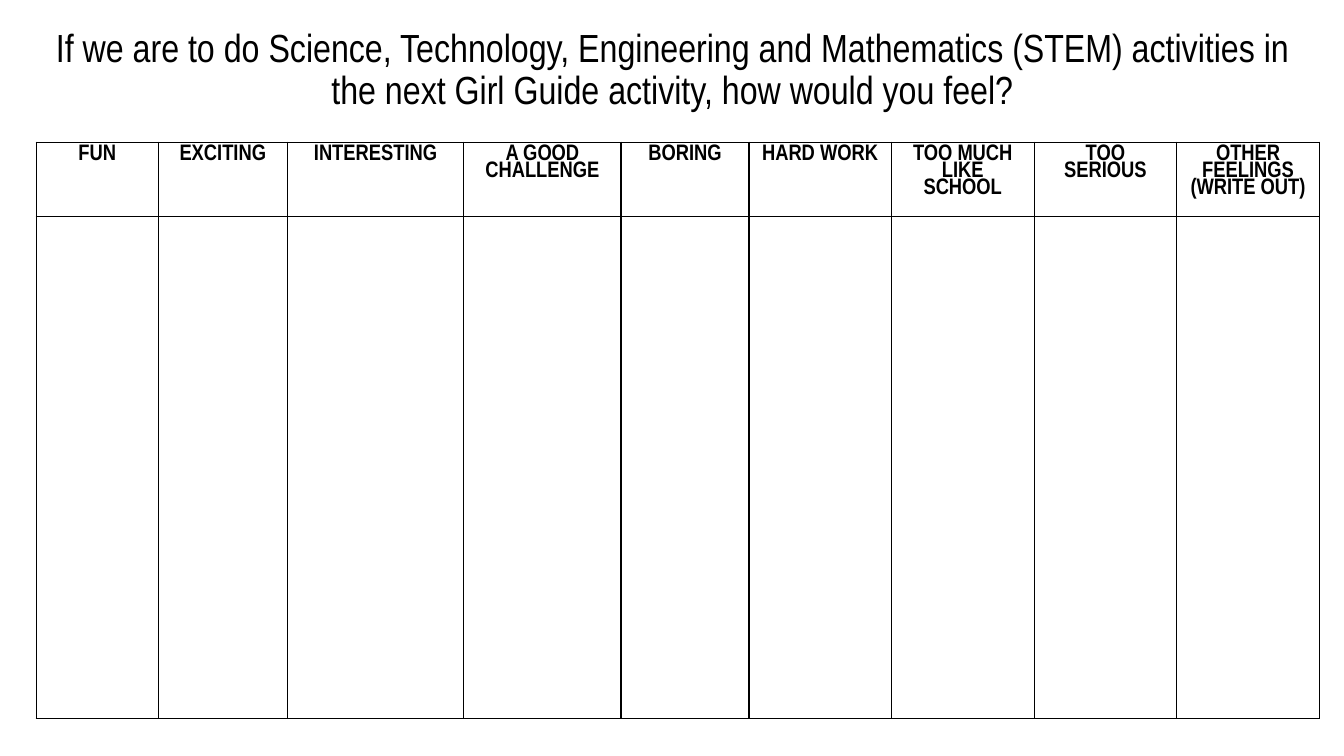
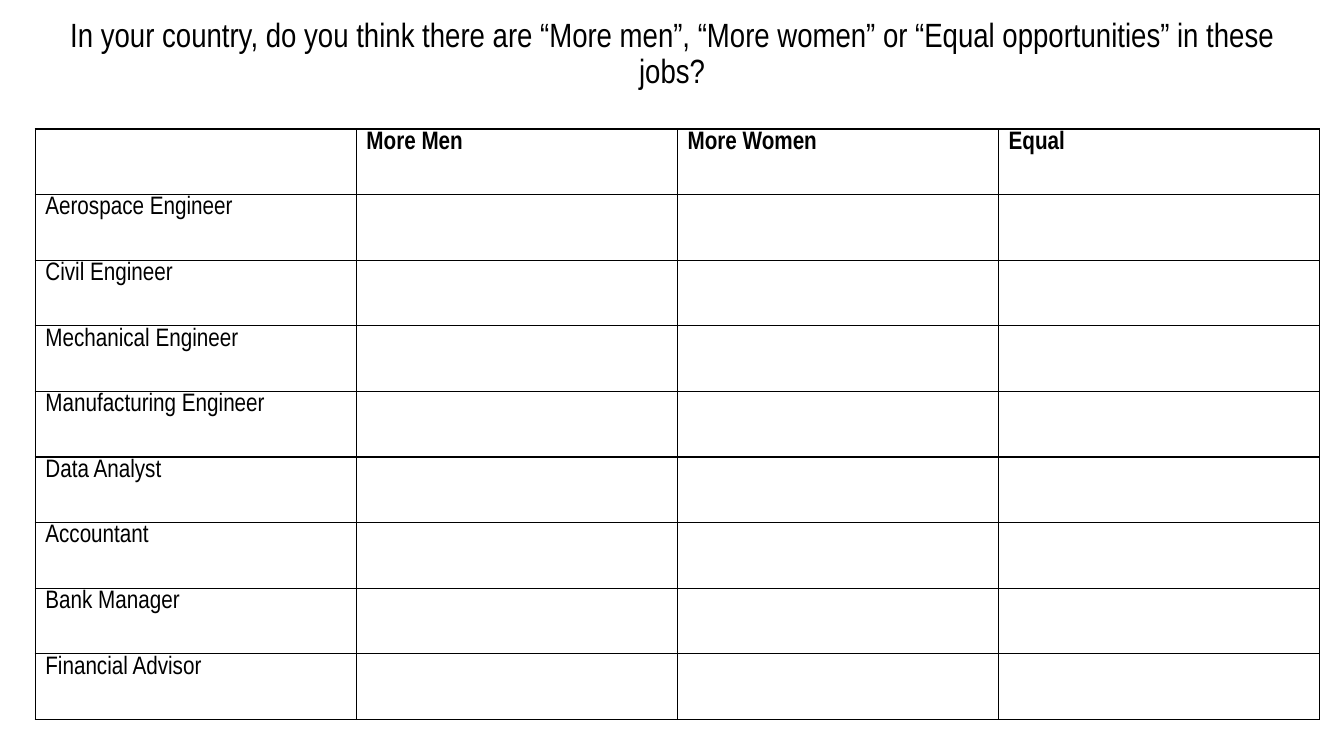
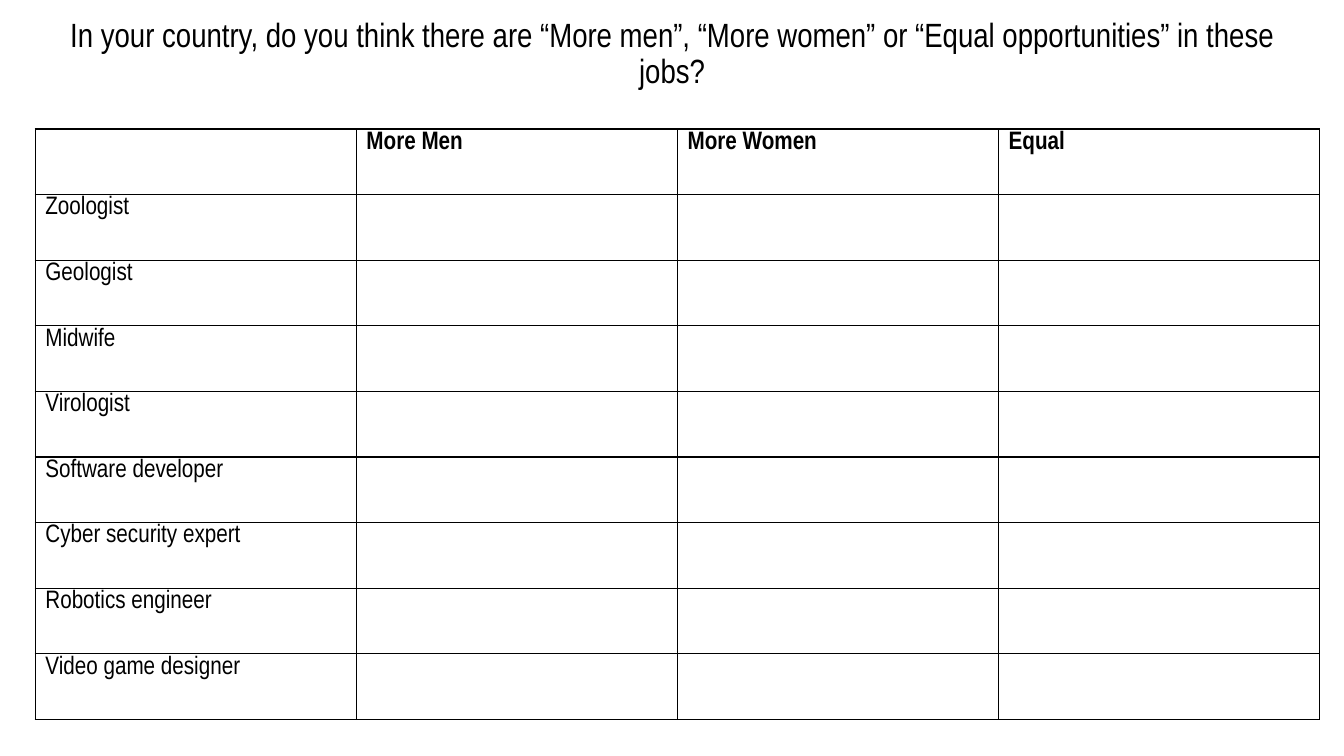
from lxml import etree
from pptx import Presentation
from pptx.dml.color import RGBColor
from pptx.enum.text import MSO_ANCHOR, PP_ALIGN
from pptx.oxml.ns import qn
from pptx.util import Inches, Pt

BLACK = RGBColor(0x00, 0x00, 0x00)
FONT = "Arial Narrow"
TITLE_LEFT, TITLE_WIDTH = 0.24, 12.85
TITLE_SPACING, CELL_SPACING = 0.9, 0.8
BORDER = Pt(1)

FEELINGS_TITLE = (
    "If we are to do Science, Technology, Engineering and Mathematics (STEM) "
    "activities in the next Girl Guide activity, how would you feel?"
)
# (feeling, column width)
FEELINGS = [
    ("FUN", 1.21),
    ("EXCITING", 1.28),
    ("INTERESTING", 1.75),
    ("A GOOD CHALLENGE", 1.56),
    ("BORING", 1.27),
    ("HARD WORK", 1.41),
    ("TOO MUCH LIKE SCHOOL", 1.42),
    ("TOO SERIOUS", 1.41),
    ("OTHER FEELINGS (WRITE OUT)", 1.42),
]
FEELINGS_ROWS = [0.73, 4.98]

JOBS_TITLE = (
    "In your country, do you think there are “More men”, “More women” "
    "or “Equal opportunities” in these jobs?"
)
JOBS_HEADER = ["", "More Men", "More Women", "Equal"]
JOB_GROUPS = [
    ["Aerospace Engineer", "Civil Engineer", "Mechanical Engineer",
     "Manufacturing Engineer", "Data Analyst", "Accountant", "Bank Manager",
     "Financial Advisor"],
    ["Zoologist", "Geologist", "Midwife", "Virologist", "Software developer",
     "Cyber security expert", "Robotics engineer", "Video game designer"],
]
JOBS_WIDTH, JOBS_HEIGHT = 12.74, 5.86


def write(paragraph, text, align, spacing, **font_format):
    paragraph.alignment = align
    paragraph.line_spacing = spacing
    run = paragraph.add_run()
    run.text = text
    run.font.color.rgb = BLACK
    for name, value in {"name": FONT, **font_format}.items():
        setattr(run.font, name, value)


def add_title(slide, text, top, height, size):
    title = slide.shapes.add_textbox(
        Inches(TITLE_LEFT), Inches(top), Inches(TITLE_WIDTH), Inches(height))
    frame = title.text_frame
    frame.word_wrap = True
    frame.vertical_anchor = MSO_ANCHOR.MIDDLE
    write(frame.paragraphs[0], text, PP_ALIGN.CENTER, TITLE_SPACING, size=Pt(size))


def outline(cell):
    """Give the cell a thin black border on every side and no fill."""
    properties = cell._tc.get_or_add_tcPr()
    for side in ("lnL", "lnR", "lnT", "lnB"):
        line = etree.SubElement(properties, qn(f"a:{side}"), w=str(BORDER))
        fill = etree.SubElement(line, qn("a:solidFill"))
        etree.SubElement(fill, qn("a:srgbClr"), val=str(BLACK))
    cell.fill.background()


def add_answer_grid(slide, left, top, widths, heights, rows, size, align):
    """Add a bordered table whose first row is bold; empty texts stay blank."""
    grid = slide.shapes.add_table(
        len(heights), len(widths), Inches(left), Inches(top),
        Inches(sum(widths)), Inches(sum(heights))).table
    grid.first_row = grid.horz_banding = False
    for column, width in zip(grid.columns, widths):
        column.width = Inches(width)
    for row, height in zip(grid.rows, heights):
        row.height = Inches(height)
    for cell in grid.iter_cells():
        outline(cell)
    for r, texts in enumerate(rows):
        for c, text in enumerate(texts):
            if text:
                write(grid.cell(r, c).text_frame.paragraphs[0], text, align,
                      CELL_SPACING, size=Pt(size), bold=r == 0)


def add_feelings_slide(deck, blank):
    slide = deck.slides.add_slide(blank)
    add_title(slide, FEELINGS_TITLE, 0.1, 1.2, 28)
    feelings, widths = zip(*FEELINGS)
    add_answer_grid(slide, 0.36, 1.41, widths, FEELINGS_ROWS, [feelings], 16,
                    PP_ALIGN.CENTER)


def add_jobs_slide(deck, blank, jobs):
    slide = deck.slides.add_slide(blank)
    add_title(slide, JOBS_TITLE, 0.13, 0.83, 24)
    rows = [JOBS_HEADER] + [[job] for job in jobs]
    widths = [JOBS_WIDTH / len(JOBS_HEADER)] * len(JOBS_HEADER)
    heights = [JOBS_HEIGHT / len(rows)] * len(rows)
    add_answer_grid(slide, 0.35, 1.28, widths, heights, rows, 18, PP_ALIGN.LEFT)


def main():
    deck = Presentation()
    deck.slide_width, deck.slide_height = Inches(13.33), Inches(7.5)
    blank = deck.slide_layouts[6]
    add_feelings_slide(deck, blank)
    for jobs in JOB_GROUPS:
        add_jobs_slide(deck, blank, jobs)
    deck.save("out.pptx")


if __name__ == "__main__":
    main()
